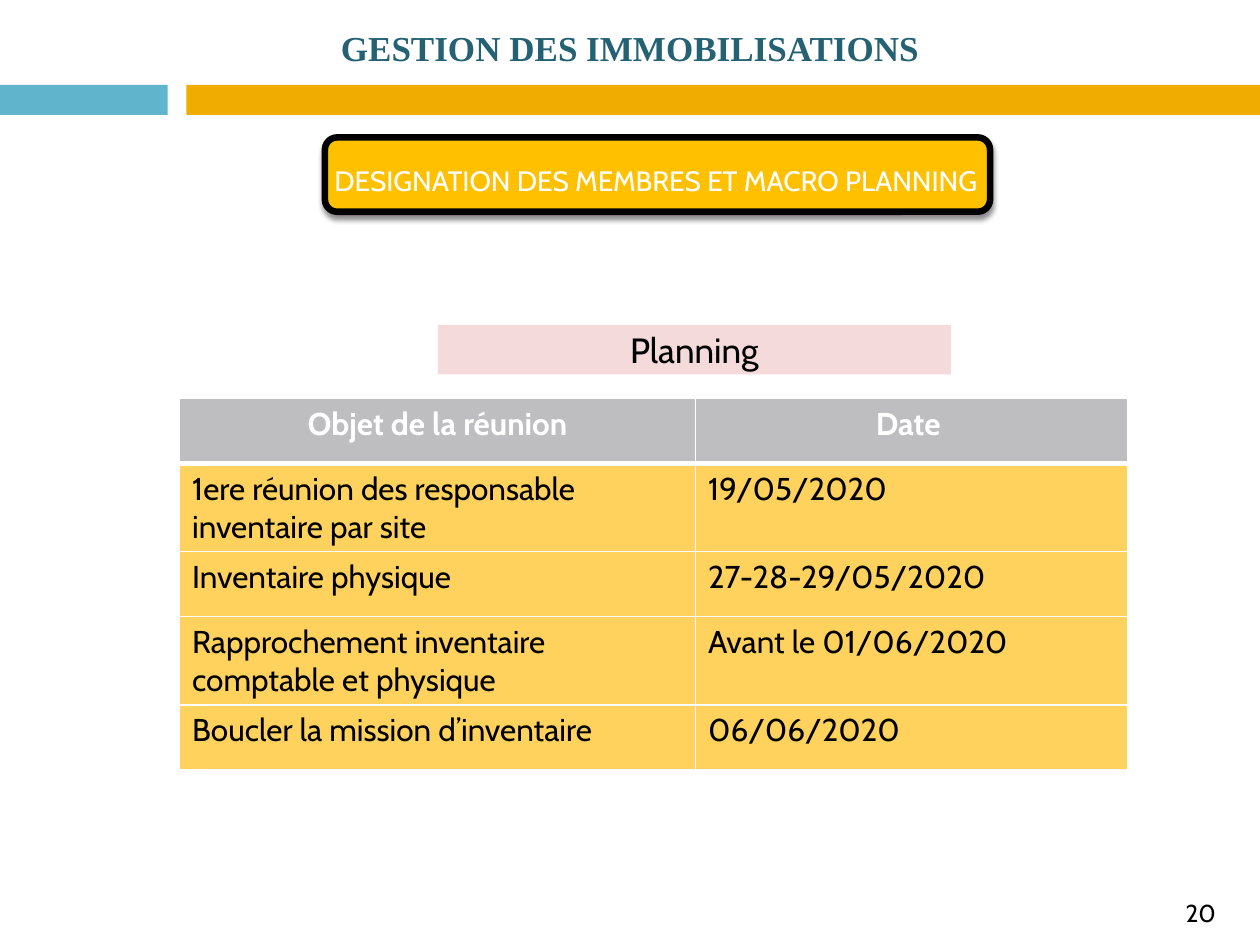
import dataclasses
import typing

import lxml.etree
import pptx
import pptx.dml.color
import pptx.enum.shapes
import pptx.enum.text
import pptx.oxml.ns
import pptx.util

Cm = pptx.util.Cm
Pt = pptx.util.Pt
qn = pptx.oxml.ns.qn
Align = pptx.enum.text.PP_ALIGN
Anchor = pptx.enum.text.MSO_ANCHOR
Preset = pptx.enum.shapes.MSO_SHAPE


@dataclasses.dataclass(frozen=True)
class Theme:
    """Colours, fonts and type sizes of the slide."""
    body_font: str = "Cabin"
    title_font: str = "Times New Roman"
    black: str = "000000"
    white: str = "FFFFFF"
    teal: str = "246172"
    sky: str = "60B5CC"
    amber: str = "F0AD00"
    gold: str = "FFC000"
    blush: str = "F4DADA"
    header_grey: str = "BEBEC1"
    row_yellow: str = "FFD25D"
    heading_size: int = 20
    table_size: int = 18
    banner_size: int = 16
    number_size: int = 14


THEME = Theme()


class Box(typing.NamedTuple):
    """Position and size in centimetres."""
    left: float
    top: float
    width: float
    height: float

    def lengths(self) -> list:
        """Return the four values as lengths."""
        return [Cm(value) for value in self]


@dataclasses.dataclass(frozen=True)
class Style:
    """Look of one run of text and its paragraph."""
    size: int
    color: str = THEME.black
    font: str = THEME.body_font
    bold: bool = False
    align: typing.Any = Align.CENTER
    spacing: float = 1.0


class Panel(typing.NamedTuple):
    """A plain filled rectangle."""
    box: Box
    color: str


class Label(typing.NamedTuple):
    """A free line of text."""
    box: Box
    text: str
    style: Style


class Meeting(typing.NamedTuple):
    """One row of the planning table."""
    subject: str
    date: str
    height: float


STRIPES = [
    Panel(Box(0, 1.71, 3.38, 0.61), THEME.sky),
    Panel(Box(3.76, 1.71, 21.64, 0.61), THEME.amber),
]
BANNER = Panel(Box(6.55, 2.77, 13.41, 1.5), THEME.gold)
PLANNING = Panel(Box(8.83, 6.55, 10.34, 1), THEME.blush)
LABELS = [
    Label(Box(6.48, 2.84, 13.49, 1.17), "DESIGNATION DES MEMBRES ET MACRO PLANNING",
          Style(THEME.banner_size, THEME.white, spacing=1.5)),
    Label(Box(1.2, 0.41, 23, 1.12), "GESTION DES IMMOBILISATIONS",
          Style(THEME.heading_size, THEME.teal, THEME.title_font, True)),
    Label(Box(23.65, 17.98, 1.12, 0.86), "20",
          Style(THEME.number_size, align=Align.LEFT)),
]
ONE_LINE, TWO_LINES = 1.31, 1.78
MEETINGS = [
    Meeting("Objet de la réunion", "Date ", ONE_LINE),
    Meeting("1ere réunion des responsable inventaire par site", "19/05/2020", TWO_LINES),
    Meeting("Inventaire physique", "27-28-29/05/2020", ONE_LINE),
    Meeting("Rapprochement inventaire comptable et physique", "Avant le 01/06/2020", TWO_LINES),
    Meeting("Boucler la mission d’inventaire", "06/06/2020", ONE_LINE),
]
TABLE_LEFT, TABLE_TOP = 3.62, 8.03
COLUMN_WIDTHS = (10.4, 8.72)


def rgb(color: str) -> pptx.dml.color.RGBColor:
    """Turn a hex string into a colour."""
    return pptx.dml.color.RGBColor.from_string(color)


def write(frame, text: str, style: Style) -> None:
    """Write one styled run into the first paragraph of a text frame."""
    paragraph = frame.paragraphs[0]
    paragraph.alignment = style.align
    paragraph.line_spacing = style.spacing
    run = paragraph.add_run()
    run.text = text
    run.font.name = style.font
    run.font.size = Pt(style.size)
    run.font.bold = style.bold
    run.font.color.rgb = rgb(style.color)


def draw_panel(slide, panel: Panel, preset=Preset.RECTANGLE):
    """Draw a filled shape with neither line nor shadow."""
    shape = slide.shapes.add_shape(preset, *panel.box.lengths())
    shape.shadow.inherit = False
    shape.fill.solid()
    shape.fill.fore_color.rgb = rgb(panel.color)
    shape.line.fill.background()
    return shape


def draw_banner(slide) -> None:
    """Draw the outlined banner with its soft shadow."""
    banner = draw_panel(slide, BANNER, Preset.ROUNDED_RECTANGLE)
    banner.line.color.rgb = rgb(THEME.black)
    banner.line.width = Pt(3.75)
    effects = banner.element.spPr.find(qn("a:effectLst"))
    shadow = lxml.etree.SubElement(
        effects, qn("a:outerShdw"), blurRad=str(Pt(3)), dist=str(Pt(2.4)),
        dir=str(90 * 60000), rotWithShape="0")
    tint = lxml.etree.SubElement(shadow, qn("a:srgbClr"), val=THEME.black)
    lxml.etree.SubElement(tint, qn("a:alpha"), val="45000")


def draw_label(slide, label: Label) -> None:
    """Draw a text box that keeps its text on one line."""
    frame = slide.shapes.add_textbox(*label.box.lengths()).text_frame
    frame.word_wrap = False
    write(frame, label.text, label.style)


def set_borders(cell, top: float, bottom: float) -> None:
    """Give a cell white borders with the given top and bottom widths."""
    properties = cell._tc.get_or_add_tcPr()
    for side, width in (("L", 1), ("R", 1), ("T", top), ("B", bottom)):
        line = lxml.etree.SubElement(properties, qn(f"a:ln{side}"), w=str(Pt(width)))
        fill = lxml.etree.SubElement(line, qn("a:solidFill"))
        lxml.etree.SubElement(fill, qn("a:srgbClr"), val=THEME.white)


def draw_table(slide) -> None:
    """Draw the planning table, header row first."""
    box = Box(TABLE_LEFT, TABLE_TOP, sum(COLUMN_WIDTHS),
              sum(meeting.height for meeting in MEETINGS))
    table = slide.shapes.add_table(
        len(MEETINGS), len(COLUMN_WIDTHS), *box.lengths()).table
    for column, width in zip(table.columns, COLUMN_WIDTHS):
        column.width = Cm(width)
    header = Style(THEME.table_size, THEME.white, bold=True)
    body = Style(THEME.table_size, align=Align.LEFT)
    for index, meeting in enumerate(MEETINGS):
        table.rows[index].height = Cm(meeting.height)
        for cell, text in zip(table.rows[index].cells, (meeting.subject, meeting.date)):
            set_borders(cell, 3 if index == 1 else 1, 3 if index == 0 else 1)
            cell.fill.solid()
            cell.fill.fore_color.rgb = rgb(THEME.row_yellow if index else THEME.header_grey)
            write(cell.text_frame, text, body if index else header)


def main() -> None:
    """Build the slide and save it."""
    deck = pptx.Presentation()
    deck.slide_width, deck.slide_height = Cm(25.4), Cm(19.05)
    slide = deck.slides.add_slide(deck.slide_layouts[6])
    for stripe in STRIPES:
        draw_panel(slide, stripe)
    draw_banner(slide)
    for label in LABELS:
        draw_label(slide, label)
    draw_table(slide)
    planning = draw_panel(slide, PLANNING).text_frame
    planning.vertical_anchor = Anchor.MIDDLE
    write(planning, "Planning", Style(THEME.heading_size))
    deck.save("out.pptx")


if __name__ == "__main__":
    main()
